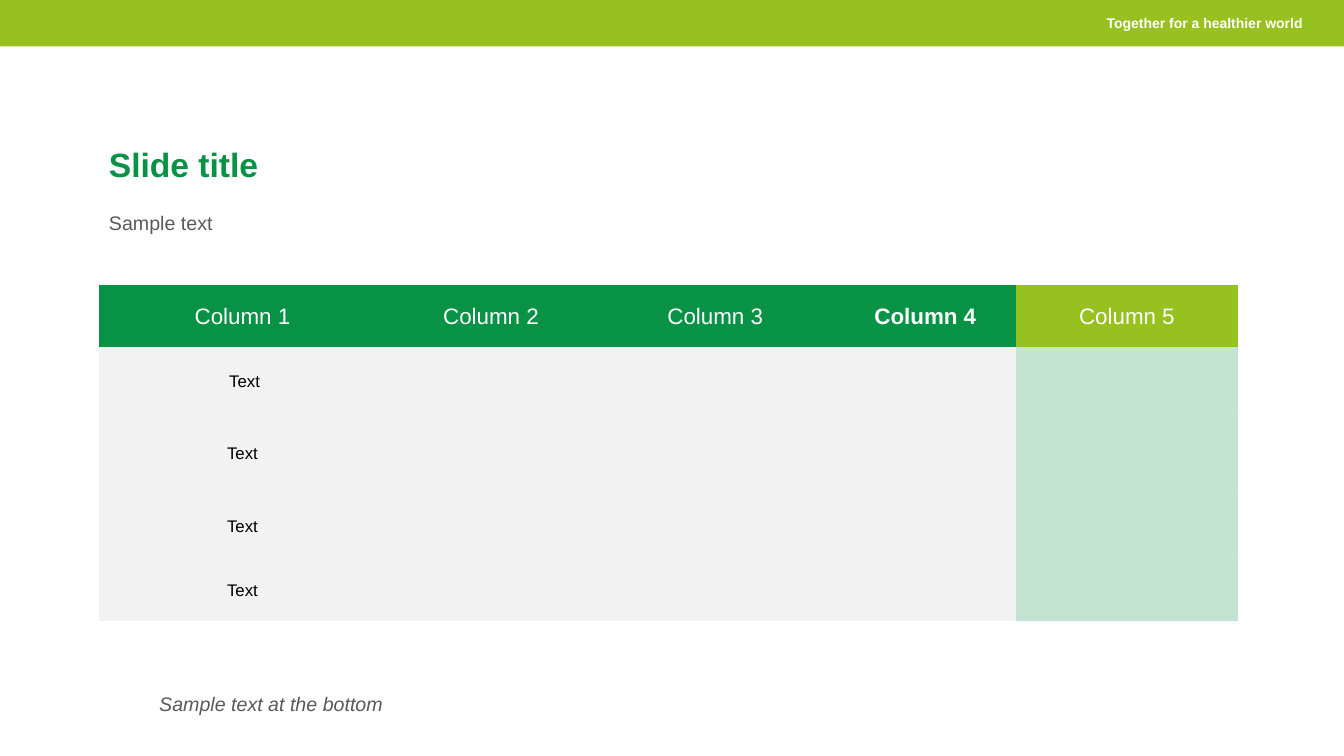
from lxml.etree import SubElement
from pptx import Presentation
from pptx.dml.color import RGBColor
from pptx.enum.shapes import MSO_SHAPE
from pptx.enum.text import MSO_ANCHOR, MSO_AUTO_SIZE, PP_ALIGN
from pptx.oxml.ns import qn
from pptx.util import Pt

FONT = "Arial"
GREEN, LIME, GREY, PALE = "079245", "96C11E", "595959", "F2F2F2"
WHITE, BLACK = "FFFFFF", "000000"
NO_STYLE_NO_GRID = "{2D5ABB26-0587-4C30-8999-92F81FD0307C}"

COLUMN_WIDTHS = [205.2, 149.76, 170.64, 129.6, 158.4]
ROW_HEIGHTS = [44, 48.24, 55.5, 48.24, 44]
HEADINGS = ["Column 1", "Column 2", "Column 3", "Column 4", "Column 5"]
ROW_LABELS = [" Text", "Text", "Text", "Text"]


def color(hex_string):
    return RGBColor.from_string(hex_string)


def fill(target, hex_string, opacity=None):
    """Fill a shape or cell; opacity is a percentage and applies to cells."""
    target.fill.solid()
    target.fill.fore_color.rgb = color(hex_string)
    if opacity is not None:
        swatch = target._tc.tcPr.find(".//" + qn("a:srgbClr"))
        SubElement(swatch, qn("a:alpha"), val=str(opacity * 1000))


def write(frame, text, hex_string, size, align=PP_ALIGN.LEFT, **font_format):
    """Write one paragraph into a text frame and return the paragraph."""
    paragraph = frame.paragraphs[0]
    paragraph.alignment = align
    run = paragraph.add_run()
    run.text = text
    run.font.color.rgb = color(hex_string)
    formats = {"name": FONT, "size": Pt(size), "bold": False, **font_format}
    for attribute, value in formats.items():
        setattr(run.font, attribute, value)
    return paragraph


def place(shape, left, top, width, height):
    box = {"left": left, "top": top, "width": width, "height": height}
    for attribute, value in box.items():
        setattr(shape, attribute, Pt(value))


def set_frame(frame, anchor=MSO_ANCHOR.TOP):
    formats = {"word_wrap": True, "auto_size": MSO_AUTO_SIZE.NONE,
               "vertical_anchor": anchor}
    for attribute, value in formats.items():
        setattr(frame, attribute, value)
    return frame


def add_text_box(slide, left, top, width, height):
    box = slide.shapes.add_textbox(Pt(left), Pt(top), Pt(width), Pt(height))
    return set_frame(box.text_frame)


def add_banner(slide, left, top, width, height):
    band = slide.shapes.add_shape(
        MSO_SHAPE.RECTANGLE, Pt(left), Pt(top), Pt(width), Pt(height))
    band.shadow.inherit = False
    fill(band, LIME)
    band.line.fill.background()
    slogan = add_text_box(slide, left + width - 266.6, top + 6.5, 244, 19.4)
    write(slogan, "Together for a healthier world", WHITE, 10,
          PP_ALIGN.RIGHT, bold=True)


def fill_heading(slide, left, top, width):
    title, intro = slide.shapes.title, slide.placeholders[1]
    place(title, left, top, 360.7, 48.2)
    heading = write(set_frame(title.text_frame, MSO_ANCHOR.BOTTOM),
                    "Slide title", GREEN, 24, bold=True)
    heading.line_spacing = 0.9

    place(intro, left, top + 59.8, width, 24.5)
    paragraph = write(set_frame(intro.text_frame), "Sample text", GREY, 14)
    paragraph.space_before = Pt(0)
    properties = paragraph._p.get_or_add_pPr()
    properties.set("marL", "0")
    properties.set("indent", "0")
    SubElement(properties, qn("a:buNone"))


def format_cell(cell):
    formats = {"vertical_anchor": MSO_ANCHOR.MIDDLE, "margin_left": Pt(0.72),
               "margin_top": Pt(0.72), "margin_right": Pt(0.72),
               "margin_bottom": Pt(0)}
    for attribute, value in formats.items():
        setattr(cell, attribute, value)


def add_column_table(slide, left, top):
    table = slide.shapes.add_table(
        len(ROW_HEIGHTS), len(COLUMN_WIDTHS), Pt(left), Pt(top),
        Pt(sum(COLUMN_WIDTHS)), Pt(sum(ROW_HEIGHTS))).table
    table._tbl.tblPr.find(qn("a:tableStyleId")).text = NO_STYLE_NO_GRID
    table.horz_banding = False
    for column, width in zip(table.columns, COLUMN_WIDTHS):
        column.width = Pt(width)
    for row, height in zip(table.rows, ROW_HEIGHTS):
        row.height = Pt(height)

    last = len(HEADINGS) - 1
    for index, heading in enumerate(HEADINGS):
        cell = table.cell(0, index)
        format_cell(cell)
        fill(cell, LIME if index == last else GREEN)
        write(cell.text_frame, heading, WHITE, 16, PP_ALIGN.CENTER,
              bold=heading == "Column 4")

    for row, label in enumerate(ROW_LABELS, start=1):
        for index in range(last):
            fill(table.cell(row, index), PALE)
        fill(table.cell(row, last), GREEN, opacity=24)
        format_cell(table.cell(row, 0))
        write(table.cell(row, 0).text_frame, label, BLACK, 12,
              PP_ALIGN.CENTER)


def add_footnote(slide, left, top, width):
    note = write(add_text_box(slide, left, top, width, 24.5),
                 "Sample text at the bottom", GREY, 14, italic=True)
    note.level = 1
    properties = note._p.get_or_add_pPr()
    properties.set("marL", str(Pt(36)))
    properties.set("indent", "0")


def main():
    deck = Presentation()
    deck.slide_width, deck.slide_height = Pt(960), Pt(540)
    slide = deck.slides.add_slide(deck.slide_layouts[1])
    left, text_width = 70.6, 776.2
    fill_heading(slide, left, 87.1, text_width)
    add_banner(slide, 0, 0, 960, 33.1)
    add_column_table(slide, left, 203.8)
    add_footnote(slide, left, 491, text_width)
    deck.save("out.pptx")


if __name__ == "__main__":
    main()
